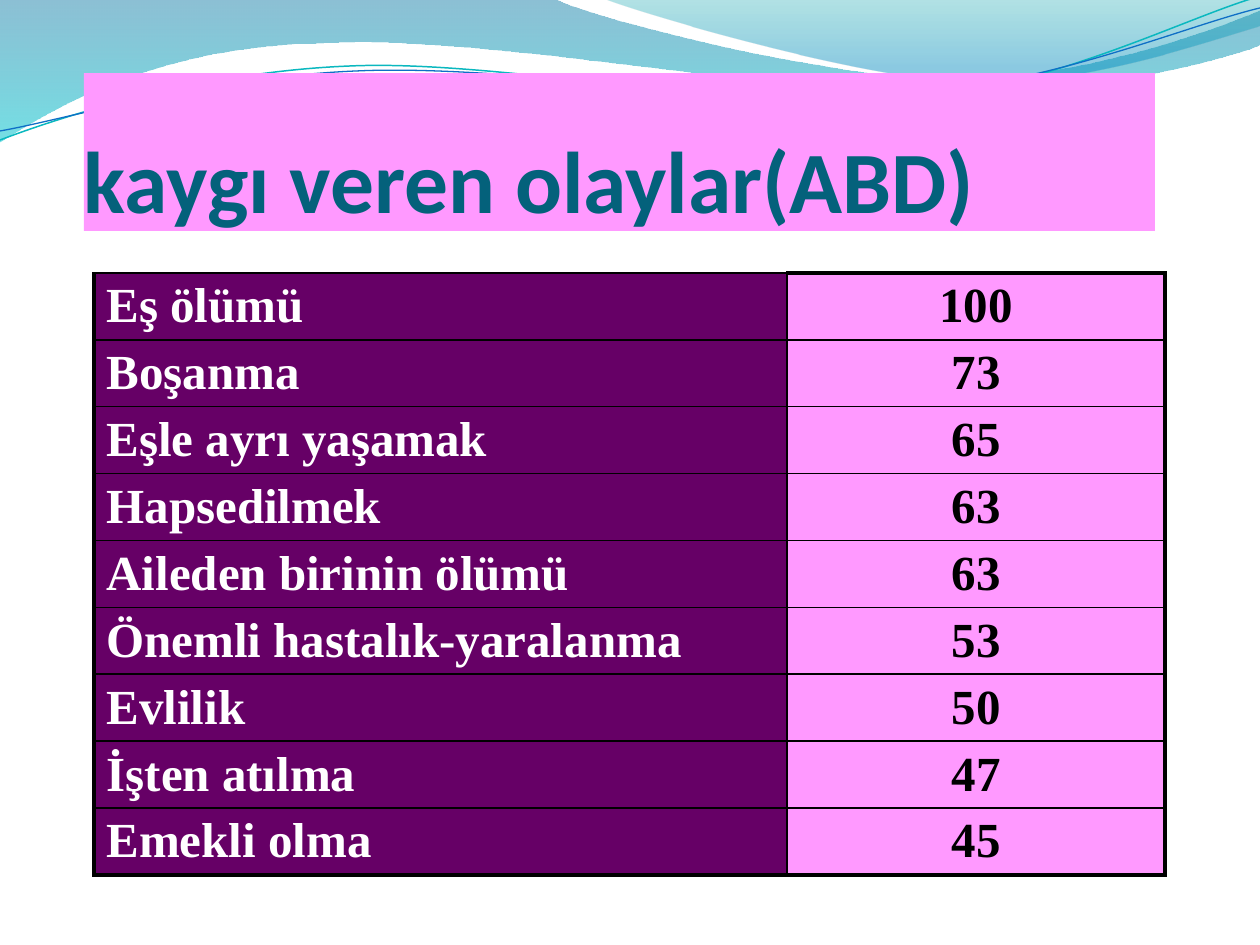
from lxml import etree
from pptx import Presentation
from pptx import util as u
from pptx.dml.color import RGBColor
from pptx.enum import text
from pptx.oxml.ns import qn

PX = 914400 / 126
COLORS = {
    "title": "04617B", "pink": "FF99FF", "purple": "660066",
    "white": "FFFFFF", "black": "000000",
    "deep_blue": "0074A1", "cyan": "00C6CF", "teal": "00A1A9", "sky": "008BBF",
    "teal_line": "0AB8BF", "blue_line": "0F6FC6",
}


def px(length):
    return u.Emu(round(length * PX))


def rgb(name):
    return RGBColor.from_string(COLORS[name])


class SlideBuilder:
    title_font, table_font = "Calibri", "Times New Roman"
    title_size, table_size = 50, 28
    thin, thick = 1, 2.25

    def __init__(self, slide):
        self.slide = slide

    def run(self, paragraph, words, font, size, color):
        run = paragraph.add_run()
        run.text = words
        run.font.name, run.font.size, run.font.bold = font, u.Pt(size), True
        run.font.color.rgb = rgb(color)

    def outline(self, start, segments, close):
        """Segments of 2 numbers are lines; those of 6 are Bezier curves."""
        ends = [(px(s[-2]), px(s[-1])) for s in segments]
        builder = self.slide.shapes.build_freeform(px(start[0]), px(start[1]))
        builder.add_line_segments(ends, close=close)
        shape = builder.convert_to_shape()
        shape.shadow.inherit = False
        # Bend the straight segments into curves
        lines = list(shape._element.spPr.iter(qn("a:lnTo")))
        for line, segment in zip(lines, segments):
            if len(segment) == 6:
                bend = etree.Element(qn("a:cubicBezTo"))
                for x, y in zip(segment[::2], segment[1::2]):
                    etree.SubElement(bend, qn("a:pt"), x=str(px(x) - shape.left),
                                     y=str(px(y) - shape.top))
                line.getparent().replace(line, bend)
        return shape

    def wave(self, start, segments, stops):
        shape = self.outline(start, segments, True)
        shape.line.fill.background()
        shape.fill.gradient()
        shape.fill.gradient_angle = 270
        for stop, (position, color, _) in zip(shape.fill.gradient_stops, stops):
            stop.position, stop.color.rgb = position, rgb(color)
        tints = shape._element.spPr.iter(qn("a:srgbClr"))
        for tint, (_, _, opacity) in zip(list(tints), stops):
            etree.SubElement(tint, qn("a:alpha"), val=str(opacity * 1000))

    def curve(self, start, segments, color, width):
        shape = self.outline(start, segments, False)
        shape.fill.background()
        shape.line.color.rgb, shape.line.width = rgb(color), u.Pt(width)

    def title(self, words, left, top, width, height):
        title = self.slide.shapes.title
        title.left, title.top, title.width, title.height = map(px, (left, top, width, height))
        title.fill.solid()
        title.fill.fore_color.rgb = rgb("pink")
        frame = title.text_frame
        frame.margin_left = frame.margin_right = frame.margin_bottom = 0
        frame.margin_top = px(6)
        frame.vertical_anchor = text.MSO_ANCHOR.BOTTOM
        frame.auto_size = text.MSO_AUTO_SIZE.NONE
        frame.word_wrap = True
        paragraph = frame.paragraphs[0]
        paragraph.alignment = text.PP_ALIGN.LEFT
        self.run(paragraph, words, self.title_font, self.title_size, "title")
        # Bring the title in front of the waves
        self.slide.shapes._spTree.append(title._element)

    def borders(self, cell, widths):
        properties = cell._tc.get_or_add_tcPr()
        for index, (side, width) in enumerate(widths.items()):
            line = etree.Element(qn(f"a:{side}"), w=str(u.Pt(width)))
            fill = etree.SubElement(line, qn("a:solidFill"))
            etree.SubElement(fill, qn("a:srgbClr"), val=COLORS["black"])
            properties.insert(index, line)

    def table(self, rows, left, top, column_widths, row_height, height):
        last = len(rows) - 1
        frame = self.slide.shapes.add_table(
            len(rows), 2, px(left), px(top), px(sum(column_widths)), px(height))
        table = frame.table
        table.first_row = table.horz_banding = False
        for column, width in zip(table.columns, column_widths):
            column.width = px(width)
        styles = (("purple", "white", text.PP_ALIGN.LEFT),
                  ("pink", "black", text.PP_ALIGN.CENTER))
        for r, values in enumerate(rows):
            table.rows[r].height = px(row_height)
            for c, (value, (fill, ink, align)) in enumerate(zip(values, styles)):
                cell = table.cell(r, c)
                cell.fill.solid()
                cell.fill.fore_color.rgb = rgb(fill)
                paragraph = cell.text_frame.paragraphs[0]
                paragraph.alignment = align
                self.run(paragraph, str(value), self.table_font, self.table_size, ink)
                self.borders(cell, {
                    "lnL": self.thick if c == 0 else self.thin,
                    "lnR": self.thick if c == 1 else self.thin,
                    "lnT": self.thick if (r, c) == (0, 1) else self.thin,
                    "lnB": self.thick if r == last else self.thin,
                })
        frame.height = px(height)


def main():
    deck = Presentation()
    deck.slide_width, deck.slide_height = px(1260), px(945)
    title_only = deck.slide_layouts[5]
    builder = SlideBuilder(deck.slides.add_slide(title_only))

    # Waves along the top
    builder.wave((0, 0), [
        (554, -1), (600, 21, 837, 79, 955, 79), (1075, 79, 1207, 33, 1260, 11),
        (1261, 45), (1238, 55, 1096, 96, 940, 94), (784, 94, 481, 35, 324, 43),
        (163, 45, 58, 105, -1, 142), (0, 0),
    ], [(0, "deep_blue", 45), (1, "cyan", 55)])
    builder.wave((604, -1), [
        (641, 14, 859, 78, 969, 82), (1079, 87, 1211, 40, 1260, 26),
        (1260, 0), (604, -1),
    ], [(0, "teal", 30), (0.8, "sky", 45)])

    # Thin curves over the waves
    builder.curve((0, 140), [
        (60, 117, 199, 72, 349, 66), (498, 59, 747, 112, 898, 101),
        (1050, 89, 1182, 19, 1257, -3),
    ], "teal_line", 0.85)
    builder.curve((0, 131), [
        (59, 121, 207, 77, 357, 71), (508, 64, 752, 106, 903, 95),
        (1053, 84, 1185, 26, 1260, 8),
    ], "blue_line", 0.75)

    # Title
    builder.title("kaygı veren olaylar(ABD)", 84, 73, 1071, 158)

    # Stressful events and their scores
    events = [
        ("Eş ölümü", 100), ("Boşanma", 73), ("Eşle ayrı yaşamak", 65),
        ("Hapsedilmek", 63), ("Aileden birinin ölümü", 63),
        ("Önemli hastalık-yaralanma", 53), ("Evlilik", 50),
        ("İşten atılma", 47), ("Emekli olma", 45),
    ]
    builder.table(events, 94, 273, (693, 378), 63, 643)
    deck.save("out.pptx")


if __name__ == "__main__":
    main()
